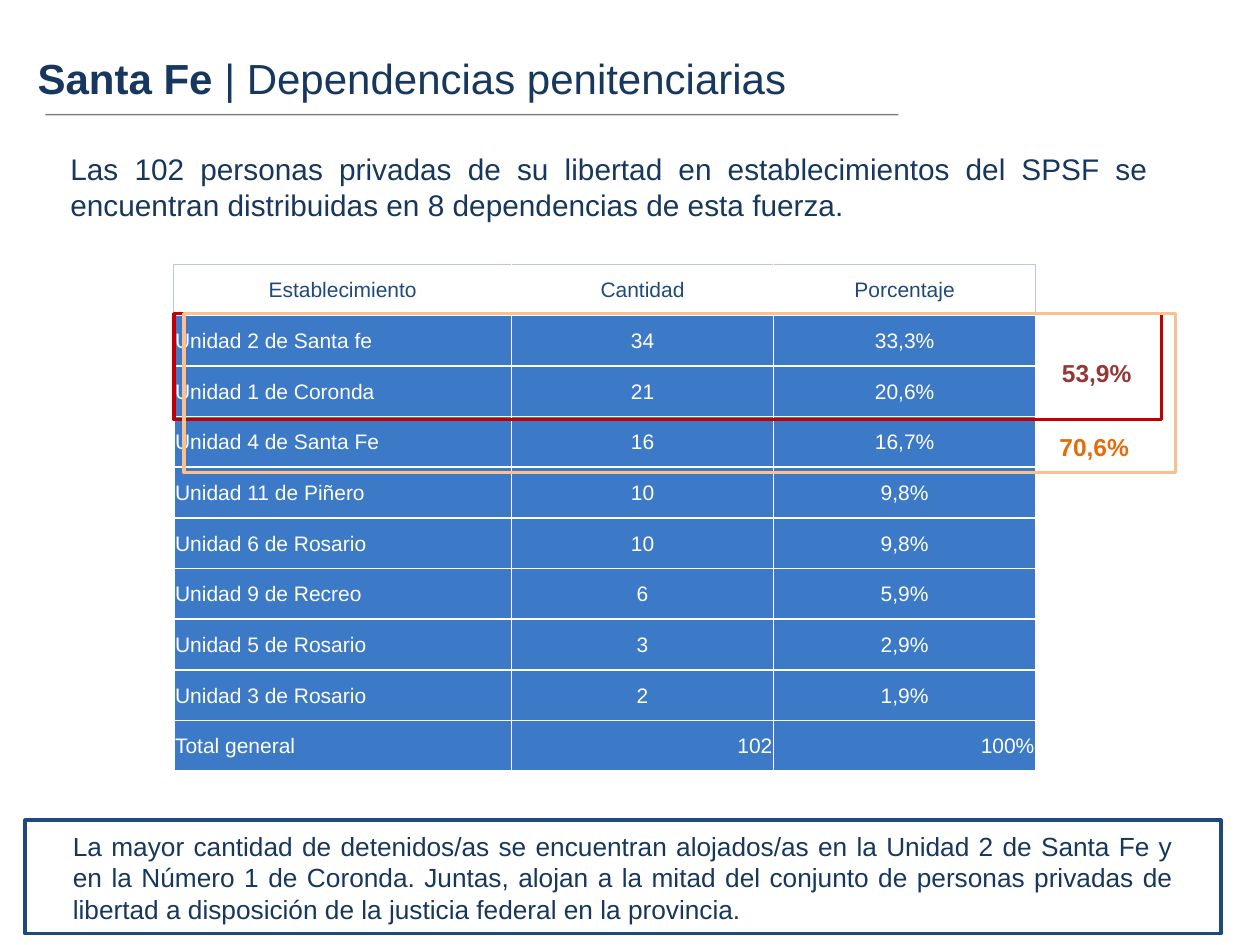
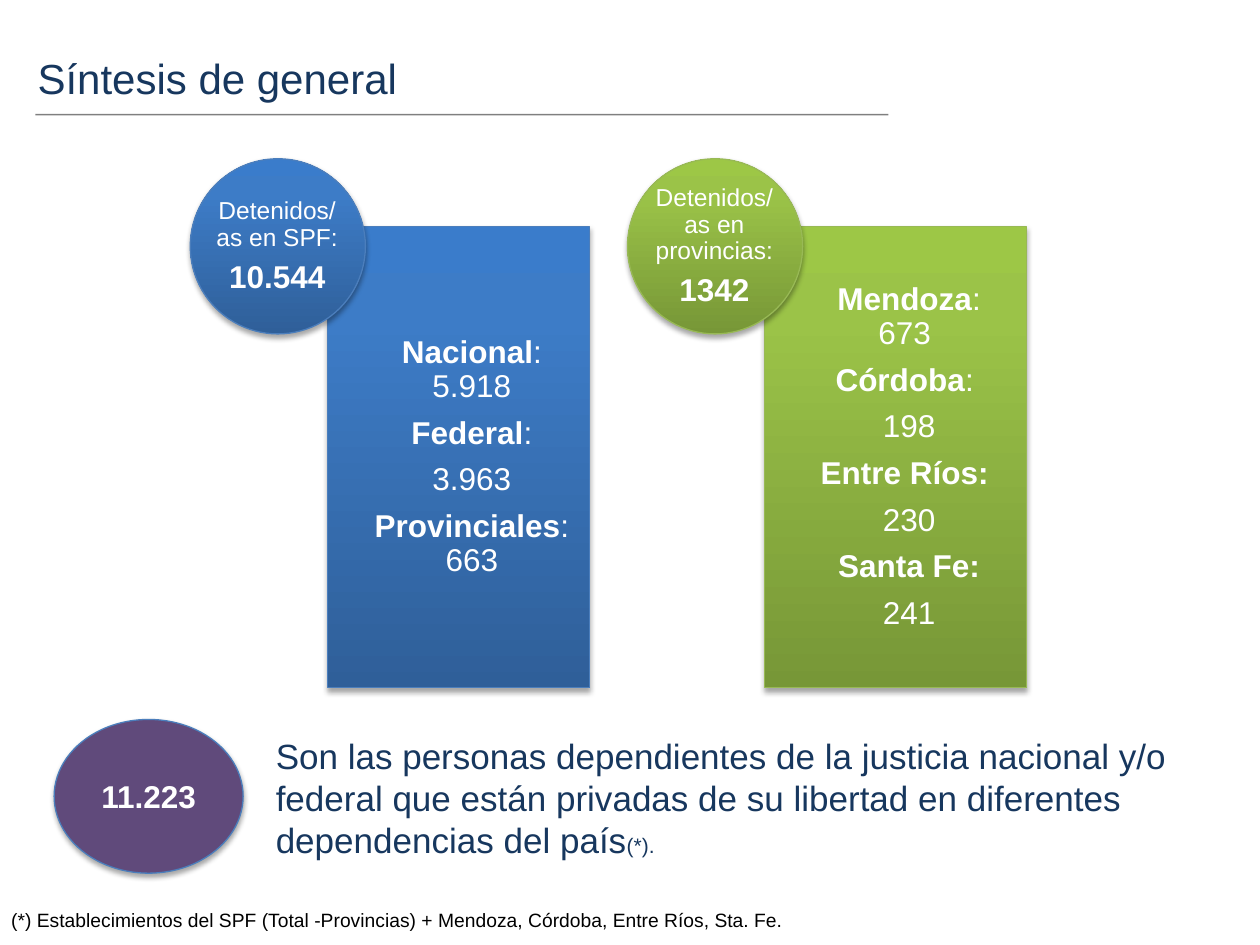
from copy import deepcopy
from dataclasses import dataclass
from typing import Any, NamedTuple

from lxml import etree
from pptx import Presentation
from pptx import util as u
from pptx.dml import color
from pptx.enum import shapes, text
from pptx.oxml import ns


@dataclass(frozen=True)
class Theme:
    font: str = "Arial"
    navy: str = "17375E"
    blue: str = "1F497D"
    white: str = "FFFFFF"
    black: str = "000000"
    cell: str = "3C7AC8"
    header_edge: str = "BDC8DD"
    red: str = "C00000"
    dark_red: str = "953735"
    peach: str = "FAC090"
    orange: str = "E46C0A"
    purple: str = "604A7B"
    blue_edge: str = "4B7EBC"
    green_edge: str = "98B955"
    blue_fade: tuple[str, ...] = ("2F5F99", "3D7CC7", "3A7CCB")
    green_fade: tuple[str, ...] = ("779737", "9BC348", "9DC746")
    title: int = 24
    closing: int = 20
    figure: int = 18
    lead: int = 17
    note: int = 15
    label: int = 14
    small: int = 12
    footnote: int = 11


class Box(NamedTuple):
    left: float
    top: float
    width: float
    height: float


class Run(NamedTuple):
    words: str
    size: int
    ink: str
    bold: bool = False


@dataclass(frozen=True)
class Pillar:
    fade: tuple[str, ...]
    edge: str
    badge: str
    total: str
    lines: list[list[tuple[str, bool]]]


T = Theme()
WIDTH, HEIGHT = u.Inches(10), u.Inches(7.5)
COLUMNS, ROWS = 100, 75
ALIGN = text.PP_ALIGN
MIDDLE = text.MSO_ANCHOR.MIDDLE
KIND = shapes.MSO_SHAPE

TABLE_BOX = Box(13.8, 21, 68.5, 40.2)
TABLE_COLUMNS = (26.8, 20.8, 20.8)
TABLE_ROWS = [
    ("Establecimiento", "Cantidad", "Porcentaje"),
    ("Unidad 2 de Santa fe", "34", "33,3%"),
    ("Unidad 1 de Coronda", "21", "20,6%"),
    ("Unidad 4 de Santa Fe", "16", "16,7%"),
    ("Unidad 11 de Piñero", "10", "9,8%"),
    ("Unidad 6 de Rosario", "10", "9,8%"),
    ("Unidad 9 de Recreo", "6", "5,9%"),
    ("Unidad 5 de Rosario", "3", "2,9%"),
    ("Unidad 3 de Rosario", "2", "1,9%"),
    ("Total general", "102", "100%"),
]
HIGHLIGHTS = [
    (Box(13.8, 24.9, 78.4, 8.4), T.red),
    (Box(14.6, 24.9, 78.7, 12.6), T.peach),
]
SHARES = [
    (Box(83.3, 27.9, 7.6, 3.4), "53,9%", T.dark_red),
    (Box(83.1, 33.8, 7.6, 3.4), "70,6%", T.orange),
]
PILLAR_PITCH = 34.7
PILLARS = [
    Pillar(T.blue_fade, T.blue_edge, "Detenidos/as en SPF:", "10.544", [
        [("Nacional", True), (": 5.918", False)],
        [("Federal", True), (":", False)],
        [("3.963", False)],
        [("Provinciales", True), (": 663", False)],
    ]),
    Pillar(T.green_fade, T.green_edge, "Detenidos/as en provincias:", "1342", [
        [("Mendoza", True), (": 673 ", False)],
        [("Córdoba", True), (": ", False)],
        [("198", False)],
        [("Entre Ríos: ", True)],
        [("230", False)],
        [("Santa Fe:", True)],
        [("241", False)],
    ]),
]


def x(columns: float) -> int:
    return round(WIDTH * columns / COLUMNS)


def y(rows: float) -> int:
    return round(HEIGHT * rows / ROWS)


def place(box: Box) -> tuple[int, int, int, int]:
    return x(box.left), y(box.top), x(box.width), y(box.height)


def rgb(value: str) -> color.RGBColor:
    return color.RGBColor.from_string(value)


def apply(target: Any, formats: dict[str, Any]) -> None:
    for name, value in formats.items():
        setattr(target, name, value)


def margins(left: float, top: float, right: float, bottom: float) -> dict[str, Any]:
    sides = ("left", "top", "right", "bottom")
    return {f"margin_{side}": u.Inches(size)
            for side, size in zip(sides, (left, top, right, bottom))}


def add_node(parent: Any, tag: str, **attributes: Any) -> Any:
    values = {name: str(value) for name, value in attributes.items()}
    return etree.SubElement(parent, ns.qn(tag), values)


def write(tf: Any, paragraphs: list[list[Run]], frame: dict[str, Any] | None = None,
          para: dict[str, Any] | None = None, gap: float = 0) -> None:
    apply(tf, {"word_wrap": True} | (frame or {}))
    for i, runs in enumerate(paragraphs):
        p = tf.add_paragraph() if i else tf.paragraphs[0]
        apply(p, para or {})
        if gap:
            p.space_after = u.Pt(round(runs[0].size * gap, 1))
        for run in runs:
            r = p.add_run()
            r.text = run.words
            apply(r.font, {"name": T.font, "size": u.Pt(run.size), "bold": run.bold})
            r.font.color.rgb = rgb(run.ink)


def add_text(parent: Any, box: Box, paragraphs: list[list[Run]], **formats: Any) -> None:
    write(parent.add_textbox(*place(box)).text_frame, paragraphs, **formats)


def add_figure(parent: Any, kind: Any, box: Box, edge: str, weight: float,
               fill: str | tuple[str, ...] | None = None, raised: bool = False) -> Any:
    sp = parent.add_shape(kind, *place(box))
    sp.shadow.inherit = False
    sp.line.color.rgb = rgb(edge)
    sp.line.width = u.Pt(weight)
    if fill is None:
        sp.fill.background()
    elif isinstance(fill, str):
        sp.fill.solid()
        sp.fill.fore_color.rgb = rgb(fill)
    else:
        sp.fill.gradient()
        sp.fill.gradient_angle = 90
        stops = next(sp.element.iter(ns.qn("a:gsLst")))
        stops.append(deepcopy(stops[-1]))
        for stop, ink, position in zip(sp.fill.gradient_stops, fill, (0, 0.8, 1)):
            stop.color.rgb = rgb(ink)
            stop.position = position
    if raised:
        effects = sp.element.spPr.find(ns.qn("a:effectLst"))
        shadow = add_node(effects, "a:outerShdw", blurRad=u.Pt(3.1), dist=u.Pt(1.8),
                          dir=5400000, rotWithShape=0)
        add_node(add_node(shadow, "a:srgbClr", val=T.black), "a:alpha", val=35000)
    return sp


def add_title(slide: Any, runs: list[tuple[str, bool]], rule_left: float) -> None:
    add_text(slide.shapes, Box(2, 3.7, 74, 6.2),
             [[Run(words, T.title, T.navy, bold) for words, bold in runs]])
    rule = slide.shapes.add_connector(shapes.MSO_CONNECTOR.STRAIGHT, x(rule_left), y(9.1),
                                      x(rule_left + 67.7), y(9.1))
    rule.line.color.rgb = rgb(T.black)
    rule.line.width = u.Pt(0.75)
    add_node(next(rule.element.iter(ns.qn("a:srgbClr"))), "a:alpha", val=50000)
    add_node(rule.element.spPr, "a:effectLst")


def add_borders(tc: Any, row: int, col: int) -> None:
    last = len(TABLE_COLUMNS) - 1
    tinted = {"a:lnL": col == 0, "a:lnR": col == last, "a:lnT": True, "a:lnB": False}
    for tag, outer in tinted.items():
        soft = row == 0 and outer
        line = add_node(tc.get_or_add_tcPr(), tag, w=u.Pt(0.75 if soft else 1))
        add_node(add_node(line, "a:solidFill"), "a:srgbClr",
                 val=T.header_edge if soft else T.white)


def add_units_table(slide: Any) -> None:
    frame = slide.shapes.add_table(len(TABLE_ROWS), len(TABLE_COLUMNS), *place(TABLE_BOX))
    table = frame.table
    apply(table, {"first_row": False, "horz_banding": False})
    for column, width in zip(table.columns, TABLE_COLUMNS):
        column.width = x(width)
    for row in table.rows:
        row.height = y(TABLE_BOX.height / len(TABLE_ROWS))
    for i, tc in enumerate(frame.element.iter(ns.qn("a:tc"))):
        row, col = divmod(i, len(TABLE_COLUMNS))
        add_borders(tc, row, col)
        cell = table.cell(row, col)
        apply(cell, margins(0.01, 0.01, 0.01, 0) | {"vertical_anchor": MIDDLE})
        cell.fill.solid()
        cell.fill.fore_color.rgb = rgb(T.cell if row else T.white)
        align = ALIGN.CENTER
        if row and col == 0:
            align = ALIGN.LEFT
        elif row == len(TABLE_ROWS) - 1:
            align = ALIGN.RIGHT
        ink = T.white if row else T.blue
        write(cell.text_frame, [[Run(TABLE_ROWS[row][col], T.small, ink)]],
              para={"alignment": align})


def add_pillar(slide: Any, pillar: Pillar, shift: float) -> None:
    group = slide.shapes.add_group_shape().shapes
    centred = {"alignment": ALIGN.CENTER, "line_spacing": 0.9}
    look = (pillar.edge, 0.75, pillar.fade, True)
    add_figure(group, KIND.RECTANGLE, Box(26 + shift, 18, 20.8, 36.6), *look)
    add_text(group, Box(29.4 + shift, 18, 17.5, 36.6),
             [[Run(words, T.figure, T.white, bold) for words, bold in line]
              for line in pillar.lines],
             frame=margins(0, 0.14, 0.14, 0.14) | {"vertical_anchor": MIDDLE},
             para=centred, gap=0.4)
    add_figure(group, KIND.OVAL, Box(15.1 + shift, 12.6, 13.9, 13.9), *look)
    add_text(group, Box(17.1 + shift, 14.7, 9.8, 9.8),
             [[Run(pillar.badge, T.label, T.white)],
              [Run(pillar.total, T.figure, T.white, True)]],
             frame=margins(0, 0, 0, 0) | {"vertical_anchor": MIDDLE},
             para=centred, gap=0.4)


def build_santa_fe(slide: Any) -> None:
    justified = {"alignment": ALIGN.JUSTIFY}
    add_title(slide, [("Santa Fe", True), (" | Dependencias penitenciarias", False)], 3.6)
    add_text(slide.shapes, Box(4.6, 11.5, 87.5, 9.4), [[Run(
        "Las 102 personas privadas de su libertad en establecimientos del SPSF se "
        "encuentran distribuidas en 8 dependencias de esta fuerza.",
        T.lead, T.navy)]], para=justified)
    add_units_table(slide)
    for box, edge in HIGHLIGHTS:
        add_figure(slide.shapes, KIND.RECTANGLE, box, edge, 2)
    for box, share, ink in SHARES:
        add_text(slide.shapes, box, [[Run(share, T.label, ink, True)]],
                 frame={"word_wrap": False,
                        "auto_size": text.MSO_AUTO_SIZE.SHAPE_TO_FIT_TEXT})
    add_text(slide.shapes, Box(4.8, 65.4, 89.3, 8.6), [[Run(
        "La mayor cantidad de detenidos/as se encuentran alojados/as en la Unidad 2 de "
        "Santa Fe y en la Número 1 de Coronda. Juntas, alojan a la mitad del conjunto de "
        "personas privadas de libertad a disposición de la justicia federal en la provincia.",
        T.note, T.navy)]], para=justified)
    add_figure(slide.shapes, KIND.RECTANGLE, Box(2, 65.1, 94.9, 9), T.blue, 2)


def build_summary(slide: Any) -> None:
    add_title(slide, [("Síntesis de general", False)], 2.8)
    add_text(slide.shapes, Box(-0.1, 71.6, 99.9, 2.9), [[Run(
        "(*) Establecimientos del SPF (Total -Provincias) + Mendoza, Córdoba, Entre Ríos, "
        "Sta. Fe.", T.footnote, T.black)]])
    for i, pillar in enumerate(PILLARS):
        add_pillar(slide, pillar, i * PILLAR_PITCH)
    add_text(slide.shapes, Box(20.9, 57.8, 74.9, 6.2), [[
        Run("Son las personas dependientes de la justicia nacional y/o federal que están "
            "privadas de su libertad en diferentes dependencias del país", T.closing, T.navy),
        Run("(*).", T.small, T.navy)]])
    total = add_figure(slide.shapes, KIND.OVAL, Box(4.3, 57.1, 15, 12.2), T.blue_edge, 0.75,
                       T.purple, True)
    write(total.text_frame, [[Run("11.223", T.figure, T.white, True)]],
          frame={"vertical_anchor": MIDDLE}, para={"alignment": ALIGN.CENTER})


def main() -> None:
    prs = Presentation()
    apply(prs, {"slide_width": WIDTH, "slide_height": HEIGHT})
    for build in (build_santa_fe, build_summary):
        build(prs.slides.add_slide(prs.slide_layouts[6]))
    prs.save("out.pptx")


if __name__ == "__main__":
    main()
